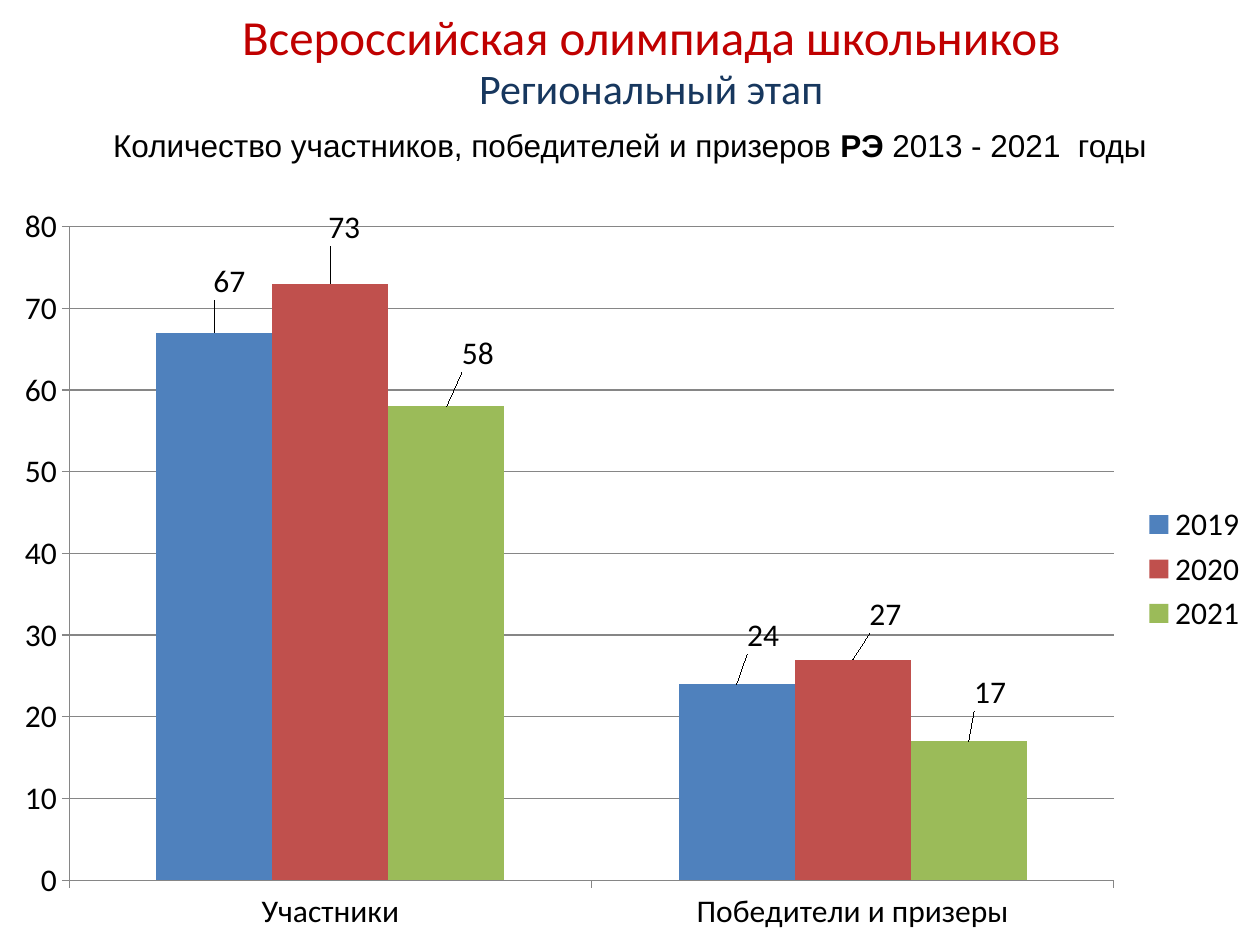
from lxml import etree
from pptx import Presentation
from pptx.chart.data import CategoryChartData
from pptx.dml.color import RGBColor
from pptx.enum.chart import XL_CHART_TYPE, XL_LABEL_POSITION, XL_LEGEND_POSITION, XL_TICK_MARK
from pptx.enum.text import PP_ALIGN
from pptx.oxml.ns import qn
from pptx.util import Cm, Pt

COLUMN = XL_CHART_TYPE.COLUMN_CLUSTERED
ABOVE = XL_LABEL_POSITION.OUTSIDE_END
RIGHT = XL_LEGEND_POSITION.RIGHT
OUT = XL_TICK_MARK.OUTSIDE
CENTER = PP_ALIGN.CENTER


def color(code):
    return RGBColor.from_string(code)


def layout(place, **vals):
    """Fill a new layout element; numbers are percent of the chart."""
    box = etree.Element(qn("c:layout"))
    man = etree.SubElement(box, qn("c:manualLayout"))
    for key, val in vals.items():
        text = val if isinstance(val, str) else str(val / 100)
        etree.SubElement(man, qn("c:" + key)).set("val", text)
    place(box)


prs = Presentation()
prs.slide_width, prs.slide_height = Cm(25.4), Cm(19.05)
slide = prs.slides.add_slide(prs.slide_layouts[6])

# Chart data: name, values, colour, label shifts in percent
rows = [
    ("2019", (67, 24), "4F81BD", ((1.2, -3.7), (2.1, -3.3))),
    ("2020", (73, 27), "C0504D", ((1.1, -4.3), (2.6, -2.8))),
    ("2021", (58, 17), "9BBB59", ((2.5, -3.9), (1.7, -3.3))),
]
data = CategoryChartData()
data.categories = ["Участники", "Победители и призеры"]
for name, vals, fill, shifts in rows:
    data.add_series(name, vals)
chart = slide.shapes.add_chart(
    COLUMN, Cm(0), Cm(3.89), Cm(25.4), Cm(15.16), data).chart
chart.has_title = False
chart.font.name = "Calibri"
chart.font.size = Pt(18)
chart.font.color.rgb = color("000000")

# Legend and axes
chart.has_legend = True
chart.legend.position = RIGHT
chart.legend.include_in_layout = False
value = chart.value_axis
value.minimum_scale, value.maximum_scale, value.major_unit = 0, 80, 10
value.has_major_gridlines = True
for axis in (value, chart.category_axis):
    axis.major_tick_mark = OUT
    axis.format.line.color.rgb = color("868686")
value.major_gridlines.format.line.color.rgb = color("868686")

# Columns and shifted value labels
plot = chart.plots[0]
plot.gap_width, plot.overlap = 150, 0
plot.vary_by_categories = False
for bars, (name, vals, fill, shifts) in zip(plot.series, rows):
    bars.format.fill.solid()
    bars.format.fill.fore_color.rgb = color(fill)
    bars.data_labels.show_value = True
    for i in range(len(shifts)):
        bars.points[i].data_label.position = ABOVE
    labels = bars.data_labels._element.findall(qn("c:dLbl"))
    for label, (dx, dy) in zip(labels, shifts):
        layout(label.find(qn("c:idx")).addnext, x=dx, y=dy)

# Plot area
area = chart._chartSpace.chart.plotArea
for old in area.findall(qn("c:layout")):
    area.remove(old)
layout(lambda box: area.insert(0, box), layoutTarget="inner", xMode="edge",
       yMode="edge", x=5.5, y=4.5, w=82.9, h=86.9)

# Headings: left, top, width, height, font, size, colour, runs
heads = [
    (0.33, 2.41, 24.74, 1.02, "Arial", 18, "000000",
     [("Количество участников, победителей и призеров ", False),
      ("РЭ", True), (" 2013 - 2021  годы", False)]),
    (0.86, 1.14, 24.54, 1.27, "Calibri", 24, "17375E",
     [("Региональный этап", False)]),
    (0.86, 0, 24.54, 1.45, "Calibri", 28, "C00000",
     [("Всероссийская олимпиада школьников", False)]),
]
for left, top, width, height, font, size, ink, runs in heads:
    frame = slide.shapes.add_textbox(
        Cm(left), Cm(top), Cm(width), Cm(height)).text_frame
    frame.word_wrap = True
    para = frame.paragraphs[0]
    para.alignment = CENTER
    para.font.name = font
    para.font.size = Pt(size)
    para.font.color.rgb = color(ink)
    for text, bold in runs:
        run = para.add_run()
        run.text = text
        run.font.bold = bold

prs.save("out.pptx")
